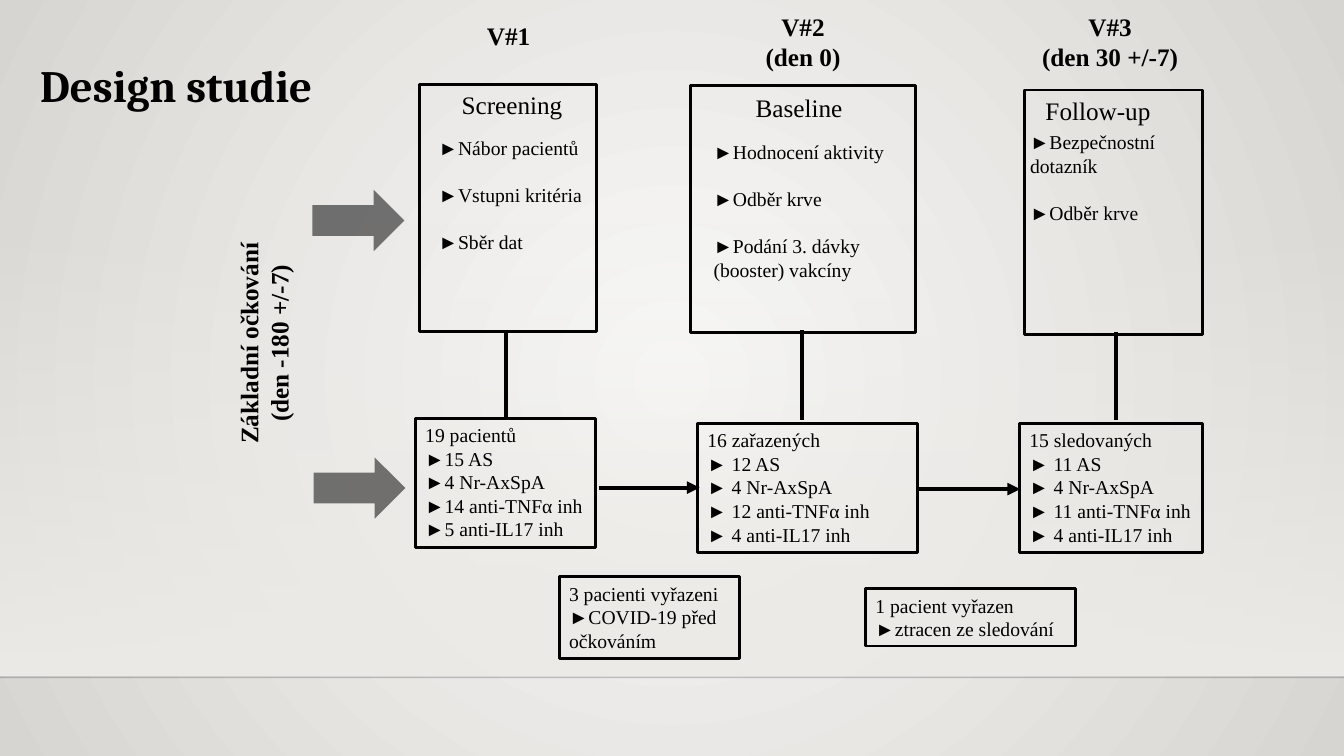
import pptx
import pptx.util
import pptx.dml.color
import pptx.enum.shapes
import pptx.enum.text
import pptx.oxml.ns
import lxml.etree

# All places are percent of the slide: left, top, width, height.
TITLE = ("Design studie", (2.25, 6.93, 22.9, 8.5))
SIDE = (["Základní očkování", "(den -180 +/-7)"], (8.85, 40.67, 21.6, 9.5))

VISITS = [
    {
        "head": (["V#1"], (32.85, 2, 10, 5.3)),
        "name": ("Screening", (33.1, 11.2, 10, 5.3)),
        "frame": (31.2, 11.2, 13.2, 32.7),
        "tasks": (["►Nábor pacientů", "►Vstupni kritéria", "►Sběr dat"],
                  (31.9, 17.33, 14.85, 17.1)),
        "stem": (37.65, 43.6, 55.3),
        "count": (["19 pacientů", "►15 AS", "►4 Nr-AxSpA",
                   "►14 anti-TNFα inh", "►5 anti-IL17 inh"],
                  (30.9, 55.33, 13.4, 17.1)),
    },
    {
        "head": (["V#2", "(den 0)"], (54.75, 0.8, 10, 9.5)),
        "name": ("Baseline", (54.45, 11.6, 10, 5.3)),
        "frame": (51.4, 11.33, 16.7, 32.7),
        "tasks": (["►Hodnocení aktivity", "►Odběr krve",
                   "►Podání 3. dávky (booster) vakcíny"],
                  (52.35, 17.87, 16.95, 20.1)),
        "stem": (59.7, 43.7, 55.5),
        "count": (["16 zařazených", "► 12 AS", "► 4 Nr-AxSpA",
                   "► 12 anti-TNFα inh", "► 4 anti-IL17 inh"],
                  (51.9, 56, 16.35, 17.1)),
    },
    {
        "head": (["V#3", "(den 30 +/-7)"], (76.7, 0.8, 11.8, 9.5)),
        "name": ("Follow-up", (76.7, 11.9, 10, 5.3)),
        "frame": (76.2, 11.9, 13.3, 32.4),
        "tasks": (["►Bezpečnostní dotazník", "►Odběr krve"],
                  (75.9, 16.53, 14.5, 13.9)),
        "stem": (83.05, 43.9, 55.6),
        "count": (["15 sledovaných", "► 11 AS", "► 4 Nr-AxSpA",
                   "► 11 anti-TNFα inh", "► 4 anti-IL17 inh"],
                  (75.85, 56, 13.65, 17.1)),
    },
]
LINKS = [(44.55, 64.5, 52.05), (68.4, 64.7, 75.9)]
ENTRY = [(23.25, 25.1, 6.83, 8.13), (23.33, 60.5, 6.83, 8.13)]
DROPS = [
    (["3 pacienti vyřazeni", "►COVID-19 před očkováním"],
     (41.6, 76.27, 13.4, 10.8)),
    (["1 pacient vyřazen", "►ztracen ze sledování"],
     (64.4, 77.87, 15.6, 7.6)),
]
BLACK = "000000"
ROW = 16.8  # height of one 14 pt line, in points

Pt = pptx.util.Pt
KIND = pptx.enum.shapes.MSO_SHAPE
ALIGN = pptx.enum.text.PP_ALIGN
qn = pptx.oxml.ns.qn

deck = pptx.Presentation()
deck.slide_width = pptx.util.Inches(13.33)
deck.slide_height = pptx.util.Inches(7.5)
slide = deck.slides.add_slide(deck.slide_layouts[6])
shapes = slide.shapes


def color(text):
    return pptx.dml.color.RGBColor.from_string(text)


def spot(left, top, *size):
    """Turn percent pairs (x, y, ...) into slide lengths."""
    sides = (deck.slide_width, deck.slide_height) * 2
    return [int(part * side / 100)
            for part, side in zip((left, top) + size, sides)]


def fade(owner, share):
    """Set the opacity, in percent, of each colour inside owner."""
    for node in list(owner.iter(qn("a:srgbClr"))):
        lxml.etree.SubElement(node, qn("a:alpha")).set("val", str(share * 1000))


def blend(fill, stops):
    fill.gradient()
    for stop, tone in zip(fill.gradient_stops, stops):
        stop.color.rgb = color(tone)


def write(shape, lines, size=14, bold=False, font="Times New Roman",
          align=ALIGN.LEFT, gap=0, wrap=True):
    frame = shape.text_frame
    frame.word_wrap = wrap
    frame.vertical_anchor = pptx.enum.text.MSO_ANCHOR.TOP
    for place, line in enumerate(lines):
        para = frame.add_paragraph() if place else frame.paragraphs[0]
        para.alignment = align
        if place and gap:
            para.space_before = Pt(gap)
        run = para.add_run()
        run.text = line
        run.font.size, run.font.bold, run.font.name = Pt(size), bold, font
        run.font.color.rgb = color(BLACK)
    return shape


def label(lines, area, **style):
    return write(shapes.add_textbox(*spot(*area)), lines, **style)


def block(area, kind=KIND.RECTANGLE):
    shape = shapes.add_shape(kind, *spot(*area))
    shape.shadow.inherit = False
    return shape


def box(area):
    shape = block(area)
    shape.fill.background()
    shape.line.color.rgb = color(BLACK)
    shape.line.width = Pt(2)
    return shape


def join(start, end, width=3, tone=BLACK, tip=False):
    line = shapes.add_connector(pptx.enum.shapes.MSO_CONNECTOR.STRAIGHT,
                                *spot(*start, *end))
    line.line.color.rgb = color(tone)
    line.line.width = Pt(width)
    props = line._element.spPr
    if tip:
        tail = lxml.etree.SubElement(props.find(qn("a:ln")), qn("a:tailEnd"))
        tail.set("type", "triangle")
    lxml.etree.SubElement(props, qn("a:effectLst"))
    return line


def back():
    """Paint the round backdrop, the pale wall and the floor line."""
    fill = slide.background.fill
    blend(fill, ("FAFAF9", "D7D5D2"))
    grad = next(slide._element.iter(qn("a:gradFill")))
    grad.remove(grad.find(qn("a:lin")))
    ring = lxml.etree.SubElement(grad, qn("a:path"))
    ring.set("path", "circle")
    core = lxml.etree.SubElement(ring, qn("a:fillToRect"))
    for side in "ltrb":
        core.set(side, "50000")

    wall = block((0, 29.33, 100, 60))
    blend(wall.fill, ("EDEBE7", "EDEBE7"))
    wall.fill.gradient_angle = 270
    wall.line.fill.background()
    fade(next(wall._element.iter(qn("a:gs"))), 0)

    floor = join((0, 89.6), (100, 89.6), width=1, tone="000001")
    fade(floor._element.spPr, 20)


def main():
    back()
    for left, top, right in LINKS:
        join((left, top), (right, top), tip=True)
    big = {"size": 18, "align": ALIGN.CENTER}
    label(*SIDE, bold=True, **big).rotation = 270
    for visit in VISITS:
        label(*visit["head"], bold=True, **big)
        name, area = visit["name"]
        label([name], area, **big)
        box(visit["frame"])
        label(*visit["tasks"], gap=ROW)
        lines, area = visit["count"]
        write(box(area), lines)
        across, top, base = visit["stem"]
        join((across, top), (across, base))
    for area in ENTRY:
        arrow = block(area, KIND.RIGHT_ARROW)
        arrow.fill.solid()
        arrow.fill.fore_color.rgb = color(BLACK)
        arrow.line.fill.background()
        fade(arrow._element.spPr, 52)
    for lines, area in DROPS:
        write(box(area), lines)
    text, area = TITLE
    label([text], area, size=32, bold=True, font="Cambria", wrap=False)
    deck.save("out.pptx")


if __name__ == "__main__":
    main()
